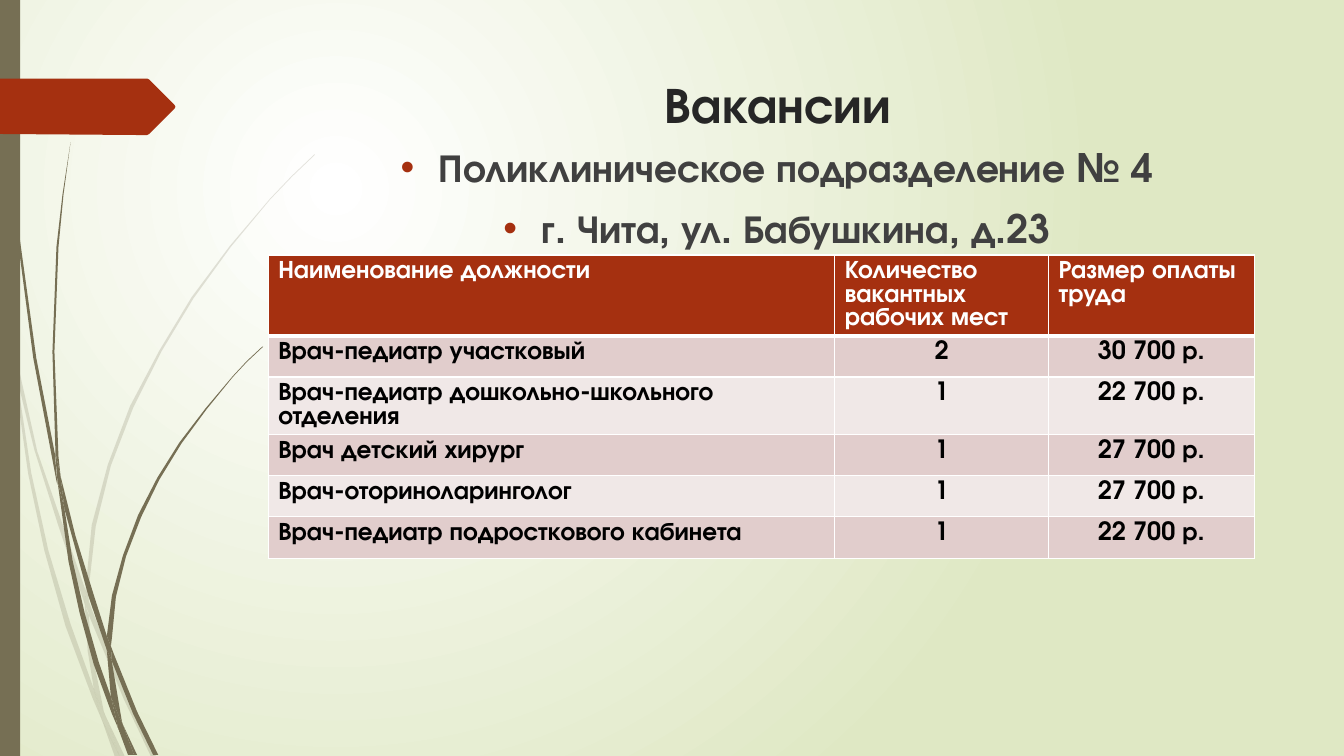
"""Build a slide listing the job vacancies of a children's outpatient department."""
from pptx import Presentation
from pptx.dml.color import RGBColor
from pptx.enum.shapes import MSO_SHAPE
from pptx.enum.text import MSO_ANCHOR, PP_ALIGN
from pptx.oxml import parse_xml
from pptx.oxml.ns import nsdecls, qn
from pptx.util import Inches, Pt
from lxml import etree

CENTER, LEFT = PP_ALIGN.CENTER, PP_ALIGN.LEFT
TOP = MSO_ANCHOR.TOP
RECTANGLE = MSO_SHAPE.RECTANGLE
OLIVE = RGBColor(0x76, 0x6F, 0x54)
RUST = RGBColor(0xA5, 0x30, 0x10)
TITLE_INK = RGBColor(0x26, 0x26, 0x26)
BODY_INK = RGBColor(0x40, 0x40, 0x40)
BLACK = RGBColor(0, 0, 0)
WHITE = RGBColor(0xFF, 0xFF, 0xFF)
BANDS = (RGBColor(0xE1, 0xCD, 0xCC), RGBColor(0xF0, 0xE8, 0xE7))
FONT = "TeX Gyre Adventor"
HUNDREDTH = Inches(0.01)

PALE_GRASS = [
    [(11, 350), (9, 322), (0, 282), (0, 299), (10, 344)],
    [(58, 522), (84, 599), (85, 586), (62, 520), (37, 448), (14, 345), (17, 376), (34, 446)],
    [(92, 607), (88, 596), (88, 610), (123, 694), (150, 751), (155, 751), (127, 692)],
    [(119, 751), (124, 751), (105, 711)],
    [(93, 683), (70, 619), (48, 546), (31, 469), (17, 376), (11, 350), (28, 470), (44, 546),
     (65, 621), (92, 693), (101, 714), (99, 707)],
    [(84, 599), (87, 646), (93, 683), (96, 692), (105, 711), (103, 706), (91, 646), (88, 610)],
    [(88, 584), (95, 522), (110, 462), (132, 405), (160, 349), (192, 296), (229, 245),
     (268, 198), (290, 175), (312, 154), (312, 153), (289, 175), (268, 197), (228, 244),
     (190, 295), (158, 348), (129, 403), (107, 461), (91, 521), (85, 584), (85, 586), (88, 596)],
    [(101, 714), (114, 751), (119, 751)],
    [(88, 608), (88, 596), (85, 586), (84, 599)],
    [(96, 692), (93, 683), (99, 707), (101, 714), (119, 751), (105, 711)],
]
DARK_GRASS = [
    [(7, 110), (17, 233), (33, 355), (56, 477), (57, 481), (55, 457), (55, 453), (36, 355),
     (19, 232), (8, 109), (5, 48), (4, 0), (3, 0), (4, 48)],
    [(88, 592), (106, 645), (106, 631), (93, 590), (75, 532), (60, 472), (64, 505)],
    [(113, 649), (110, 641), (111, 656), (132, 708), (152, 749), (157, 749), (136, 706)],
    [(110, 691), (98, 657), (84, 608), (72, 556), (64, 505), (57, 477), (68, 557), (79, 608),
     (93, 659), (111, 708), (117, 722), (116, 717)],
    [(60, 472), (58, 453), (54, 349), (58, 245), (63, 193), (70, 141), (62, 193), (56, 245),
     (52, 349), (55, 449)],
    [(133, 749), (136, 749), (122, 719)],
    [(57, 477), (64, 505), (60, 472), (55, 449), (55, 453)],
    [(111, 633), (115, 592), (125, 552), (140, 513), (158, 476), (180, 440), (205, 406),
     (231, 374), (245, 359), (261, 344), (260, 344), (245, 358), (231, 373), (204, 405),
     (178, 439), (156, 474), (137, 511), (122, 551), (111, 591), (106, 631), (110, 641)],
    [(117, 722), (127, 749), (131, 749)],
    [(106, 645), (110, 691), (116, 706), (122, 719), (121, 716), (111, 656), (109, 651)],
    [(106, 645), (109, 651), (111, 656), (110, 641), (106, 631)],
    [(116, 706), (110, 691), (116, 717), (117, 722), (130, 749), (133, 749), (122, 719)],
]
POINTER = [(173, 108), (148, 133), (146, 134), (136, 134), (0, 133), (0, 78), (146, 78),
           (148, 79), (173, 104), (174, 106)]
VACANCIES = [
    ("Наименование должности", "Количество вакантных рабочих мест", "Размер оплаты труда"),
    ("Врач-педиатр участковый", "2", "30 700 р."),
    ("Врач-педиатр дошкольно-школьного отделения", "1", "22 700 р."),
    ("Врач детский хирург", "1", "27 700 р."),
    ("Врач-оториноларинголог", "1", "27 700 р."),
    ("Врач-педиатр подросткового кабинета", "1", "22 700 р."),
]
COLUMN_WIDTHS = (5.62, 2.12, 2.04)
ROW_HEIGHT = 0.41

deck = Presentation()
deck.slide_width, deck.slide_height = Inches(13.33), Inches(7.5)
slide = deck.slides.add_slide(deck.slide_layouts[6])
slide.element.cSld.insert(0, parse_xml(
    f'<p:bg {nsdecls("p", "a")}><p:bgPr><a:gradFill rotWithShape="1"><a:gsLst>'
    '<a:gs pos="0"><a:srgbClr val="FFFFFF"/></a:gs>'
    '<a:gs pos="100000"><a:srgbClr val="DFE8C4"/></a:gs></a:gsLst>'
    '<a:path path="circle"><a:fillToRect l="50000" t="50000" r="100000" b="100000"/></a:path>'
    '</a:gradFill><a:effectLst/></p:bgPr></p:bg>'))


def paint(shape, color, opacity=100):
    shape.shadow.inherit = False
    shape.fill.solid()
    shape.fill.fore_color.rgb = color
    shape.line.fill.background()
    if opacity < 100:
        tint = shape.element.spPr.find(".//" + qn("a:srgbClr"))
        etree.SubElement(tint, qn("a:alpha")).set("val", str(opacity * 1000))


def style(paragraph, text, size, color, align):
    paragraph.text = text
    paragraph.alignment = align
    paragraph.font.name = FONT
    paragraph.font.size = Pt(size)
    paragraph.font.bold = True
    paragraph.font.color.rgb = color


for blades, opacity in ((PALE_GRASS, 20), (DARK_GRASS, 100)):
    for outline in blades:
        blade = slide.shapes.build_freeform(*outline[0], scale=HUNDREDTH)
        blade.add_line_segments(outline[1:], close=True)
        paint(blade.convert_to_shape(), OLIVE, opacity)

side_bar = slide.shapes.add_shape(RECTANGLE, 0, 0, Inches(0.2), deck.slide_height)
paint(side_bar, OLIVE)
pointer = slide.shapes.build_freeform(*POINTER[0], scale=HUNDREDTH)
pointer.add_line_segments(POINTER[1:], close=True)
paint(pointer.convert_to_shape(), RUST)

heading = slide.shapes.add_textbox(Inches(2.84), Inches(0.68), Inches(9.75), Inches(1.4))
heading.text_frame.word_wrap = True
heading.text_frame.vertical_anchor = TOP
style(heading.text_frame.paragraphs[0], "Вакансии", 36, TITLE_INK, CENTER)

address = slide.shapes.add_textbox(Inches(2.83), Inches(1.37), Inches(9.75), Inches(5.1))
address.text_frame.word_wrap = True
address.text_frame.vertical_anchor = TOP
address.text_frame.add_paragraph()
address_lines = ("Поликлиническое подразделение № 4", "г. Чита, ул. Бабушкина, д.23")
for paragraph, line in zip(address.text_frame.paragraphs, address_lines):
    style(paragraph, line, 28, BODY_INK, CENTER)
    paragraph.space_before = Pt(10)
    bullet = paragraph._p.get_or_add_pPr()
    bullet.set("marL", str(Inches(0.38)))
    bullet.set("indent", str(Inches(-0.38)))
    for position, mark in enumerate((f'<a:buClr {nsdecls("a")}><a:srgbClr val="{RUST}"/></a:buClr>',
                                     f'<a:buFont {nsdecls("a")} typeface="Arial"/>',
                                     f'<a:buChar {nsdecls("a")} char="•"/>'), start=1):
        bullet.insert(position, parse_xml(mark))

vacancies = slide.shapes.add_table(
    len(VACANCIES), len(COLUMN_WIDTHS), Inches(2.66), Inches(2.53),
    Inches(sum(COLUMN_WIDTHS)), Inches(ROW_HEIGHT * len(VACANCIES))).table
for column, width in zip(vacancies.columns, COLUMN_WIDTHS):
    column.width = Inches(width)
for row, entries in enumerate(VACANCIES):
    vacancies.rows[row].height = Inches(ROW_HEIGHT)
    is_header = row == 0
    for column, entry in enumerate(entries):
        cell = vacancies.cell(row, column)
        paragraph = cell.text_frame.paragraphs[0]
        style(paragraph, entry, 18, WHITE if is_header else BLACK,
              LEFT if is_header or column == 0 else CENTER)
        paragraph.line_spacing = Pt(16.8)
        properties = cell._tc.get_or_add_tcPr()
        for side in "LRTB":
            weight = Pt(3 if is_header and side == "B" else 1)
            properties.append(parse_xml(
                f'<a:ln{side} {nsdecls("a")} w="{weight}"><a:solidFill>'
                f'<a:srgbClr val="{WHITE}"/></a:solidFill></a:ln{side}>'))
        cell.fill.solid()
        cell.fill.fore_color.rgb = RUST if is_header else BANDS[(row - 1) % 2]

deck.save("out.pptx")
